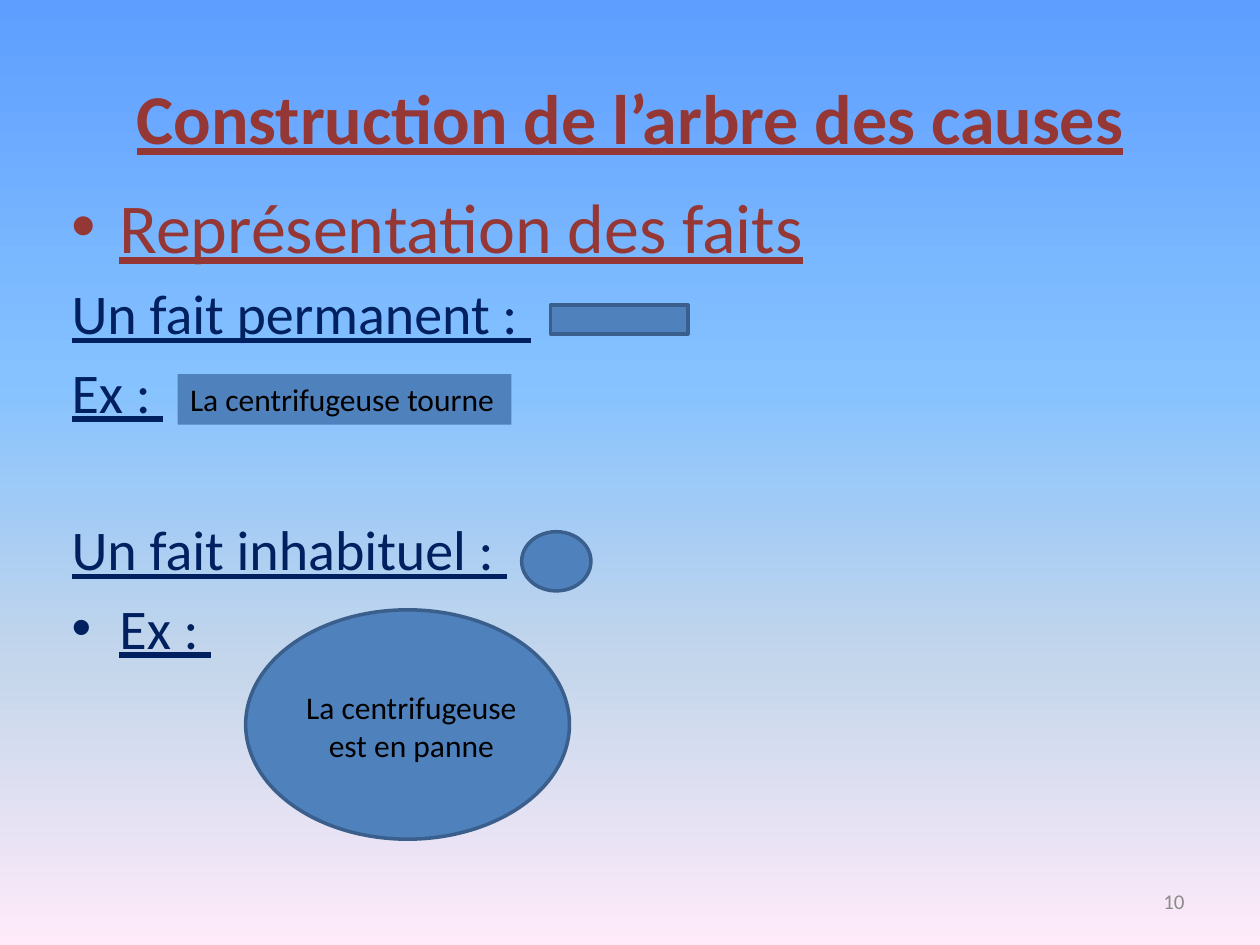
"""Build the slide on how facts are drawn in a cause tree."""
from copy import deepcopy
from dataclasses import dataclass

from lxml.etree import SubElement
from pptx import Presentation
from pptx.dml.color import RGBColor
from pptx.enum.shapes import MSO_SHAPE as Preset
from pptx.enum.text import MSO_ANCHOR as Anchor, PP_ALIGN as Align
from pptx.oxml.ns import qn
from pptx.util import Inches, Pt

COLUMNS, ROWS = 100, 75
FONT = "Calibri"
HANGING = Inches(0.38)
COLORS = {
    "heading": "953735",
    "body": "002060",
    "label": "000000",
    "number": "8C8C8C",
    "fill": "4F81BD",
    "outline": "3A5F8C",
}
SKY = {0: "5E9EFF", 40: "85C2FF", 70: "C4D6EB", 100: "FFEBFA"}


@dataclass(frozen=True)
class Box:
    column: float
    row: float
    columns: float
    rows: float


@dataclass(frozen=True)
class Line:
    text: str
    size: int = 32
    color: str = "body"
    bullet: bool = False
    before: float = 6.4


@dataclass(frozen=True)
class Symbol:
    preset: Preset
    box: Box
    outlined: bool = True
    label: str = ""
    align: Align = Align.LEFT


LINES = [
    Line("Représentation des faits", 40, "heading", True, 2),
    Line("Un fait permanent : "),
    Line("Ex : "),
    Line("Un fait inhabituel : ", before=51.5),
    Line("Ex : ", bullet=True),
]
KEY_SYMBOLS = [
    Symbol(Preset.RECTANGLE, Box(43.7, 24.2, 10.9, 2.3)),
    Symbol(Preset.OVAL, Box(41.4, 42.2, 5.5, 4.7)),
]
UNUSUAL_FACT = [
    Symbol(Preset.OVAL, Box(19.5, 48.4, 25.7, 18.2)),
    Symbol(Preset.RECTANGLE, Box(21.6, 54.1, 22.1, 7.1), False,
           "La centrifugeuse est en panne", Align.CENTER),
]
PERMANENT_FACT = Symbol(Preset.RECTANGLE, Box(14.1, 29.7, 26.5, 4), False,
                        "La centrifugeuse tourne")


def rgb(name: str) -> RGBColor:
    return RGBColor.from_string(COLORS[name])


def place(box: Box, presentation) -> tuple[int, int, int, int]:
    column = presentation.slide_width / COLUMNS
    row = presentation.slide_height / ROWS
    return (round(box.column * column), round(box.row * row),
            round(box.columns * column), round(box.rows * row))


def write(paragraph, text: str, *, size: int, color: str, bold: bool = False,
          underline: bool = False, align: Align = Align.LEFT, before: float = 0) -> None:
    paragraph.alignment = align
    paragraph.space_before = Pt(before)
    run = paragraph.add_run()
    run.text = text
    font = run.font
    font.name, font.size = FONT, Pt(size)
    font.bold, font.underline = bold, underline
    font.color.rgb = rgb(color)


def add_frame(slide, box: Box, presentation, anchor: Anchor):
    frame = slide.shapes.add_textbox(*place(box, presentation)).text_frame
    frame.word_wrap = True
    frame.vertical_anchor = anchor
    return frame


def add_bullet(paragraph) -> None:
    properties = paragraph._p.get_or_add_pPr()
    properties.set("marL", str(HANGING))
    properties.set("indent", str(-HANGING))
    SubElement(properties, qn("a:buFont"), typeface="Arial")
    SubElement(properties, qn("a:buChar"), char="•")


def add_symbol(shapes, symbol: Symbol, presentation) -> None:
    shape = shapes.add_shape(symbol.preset, *place(symbol.box, presentation))
    shape.shadow.inherit = False
    shape.fill.solid()
    shape.fill.fore_color.rgb = rgb("fill")
    if symbol.outlined:
        shape.line.color.rgb = rgb("outline")
        shape.line.width = Pt(2)
    else:
        shape.line.fill.background()
    if symbol.label:
        frame = shape.text_frame
        frame.word_wrap = True
        frame.vertical_anchor = Anchor.TOP
        write(frame.paragraphs[0], symbol.label, size=18, color="label", align=symbol.align)


def paint_background(slide) -> None:
    fill = slide.background.fill
    fill.gradient()
    fill.gradient_angle = 270
    stop_list = fill.gradient_stops[0]._gs.getparent()
    for stop in list(stop_list)[1:]:
        stop_list.remove(stop)
    for _ in range(len(SKY) - 1):
        stop_list.append(deepcopy(stop_list[0]))
    for stop, (percent, color) in zip(fill.gradient_stops, SKY.items()):
        stop.position = percent / 100
        stop.color.rgb = RGBColor.from_string(color)


def main() -> None:
    presentation = Presentation()
    presentation.slide_width, presentation.slide_height = Inches(10), Inches(7.5)
    slide = presentation.slides.add_slide(presentation.slide_layouts[6])
    paint_background(slide)

    title = add_frame(slide, Box(5, 3, 90, 12.5), presentation, Anchor.MIDDLE)
    write(title.paragraphs[0], "Construction de l’arbre des causes", size=40,
          color="heading", bold=True, underline=True, align=Align.CENTER)

    body = add_frame(slide, Box(4.7, 14.1, 90, 52), presentation, Anchor.TOP)
    for index, line in enumerate(LINES):
        paragraph = body.add_paragraph() if index else body.paragraphs[0]
        write(paragraph, line.text, size=line.size, color=line.color,
              underline=True, before=line.before)
        if line.bullet:
            add_bullet(paragraph)

    for symbol in KEY_SYMBOLS:
        add_symbol(slide.shapes, symbol, presentation)
    group = slide.shapes.add_group_shape()
    for symbol in UNUSUAL_FACT:
        add_symbol(group.shapes, symbol, presentation)
    add_symbol(slide.shapes, PERMANENT_FACT, presentation)

    number = add_frame(slide, Box(71.7, 69.5, 23.3, 4), presentation, Anchor.MIDDLE)
    write(number.paragraphs[0], "10", size=12, color="number", align=Align.RIGHT)
    presentation.save("out.pptx")


if __name__ == "__main__":
    main()
